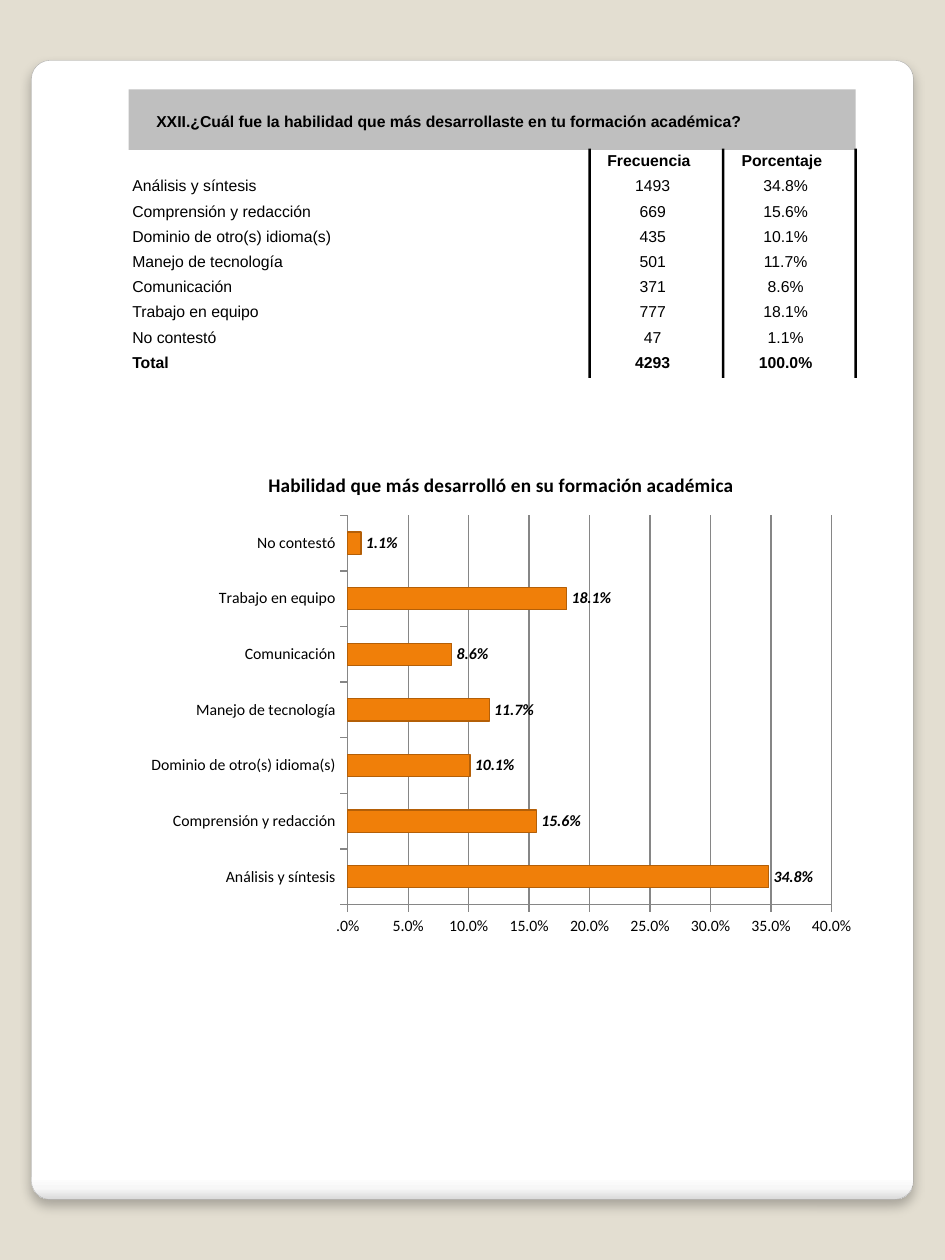
from pptx import Presentation
from pptx.chart.data import CategoryChartData
from pptx.dml.color import RGBColor
from pptx.enum.chart import XL_CHART_TYPE, XL_LABEL_POSITION, XL_TICK_MARK
from pptx.enum.shapes import MSO_SHAPE
from pptx.enum.text import MSO_ANCHOR, PP_ALIGN
from pptx.oxml import parse_xml
from pptx.oxml.ns import nsdecls
from pptx.util import Inches, Pt

BAR = XL_CHART_TYPE.BAR_CLUSTERED
OUTSIDE_END = XL_LABEL_POSITION.OUTSIDE_END
TICK_OUT = XL_TICK_MARK.OUTSIDE
ROUNDED, RECTANGLE = MSO_SHAPE.ROUNDED_RECTANGLE, MSO_SHAPE.RECTANGLE
MIDDLE = MSO_ANCHOR.MIDDLE
LEFT, CENTER = PP_ALIGN.LEFT, PP_ALIGN.CENTER
NO_GRID_STYLE = "{2D5ABB26-0587-4C30-8999-92F81FD0307C}"

QUESTION = "XXII.¿Cuál fue la habilidad que más desarrollaste en tu formación académica?"
CHART_TITLE = "Habilidad que más desarrolló en su formación académica"
SKILLS = [
    ("Análisis y síntesis", 1493, 0.348),
    ("Comprensión y redacción", 669, 0.156),
    ("Dominio de otro(s) idioma(s)", 435, 0.101),
    ("Manejo de tecnología", 501, 0.117),
    ("Comunicación", 371, 0.086),
    ("Trabajo en equipo", 777, 0.181),
    ("No contestó", 47, 0.011),
]
PERCENT = "####.0%"


def rgb(value):
    return RGBColor.from_string(value)


class SurveySlide:
    text_color = "000000"
    grid_color = "868686"
    table_font = "Arial"
    chart_font = "Calibri"

    def __init__(self, slide):
        self.slide = slide

    def style(self, font, name, size=9, bold=False, italic=False):
        font.name, font.size = name, Pt(size)
        font.bold, font.italic = bold, italic
        font.color.rgb = rgb(self.text_color)

    def background(self, color):
        fill = self.slide.background.fill
        fill.solid()
        fill.fore_color.rgb = rgb(color)

    def panel(self, left, top, width, height, stops):
        """Rounded card with a vertical gradient and a soft shadow, behind all else."""
        card = self.slide.shapes.add_shape(
            ROUNDED, Inches(left), Inches(top), Inches(width), Inches(height))
        card.adjustments[0] = 0.021
        card.fill.gradient()
        card.fill.gradient_angle = 270
        stop_list = card._element.spPr.find(".//{*}gsLst")
        for stop in list(stop_list):
            stop_list.remove(stop)
        for position, color in stops:
            stop_list.append(parse_xml(
                f'<a:gs {nsdecls("a")} pos="{position * 1000}">'
                f'<a:srgbClr val="{color}"/></a:gs>'))
        card.line.color.rgb = rgb("A4A4A4")
        card.line.width = Pt(0.16)
        card.shadow.inherit = False
        card._element.spPr.find("{*}effectLst").append(parse_xml(
            f'<a:outerShdw {nsdecls("a")} blurRad="{Pt(6)}" dist="{Pt(4)}" '
            'dir="5400000" algn="t" rotWithShape="0"><a:srgbClr val="000000">'
            '<a:alpha val="25000"/></a:srgbClr></a:outerShdw>'))
        self.slide.shapes._spTree.insert(2, card._element)

    def title(self, text, left, top, width, height):
        title = self.slide.shapes.title
        title.left, title.top = Inches(left), Inches(top)
        title.width, title.height = Inches(width), Inches(height)
        title.fill.solid()
        title.fill.fore_color.rgb = rgb("BFBFBF")
        frame = title.text_frame
        frame.text = text
        frame.word_wrap = True
        frame.vertical_anchor = MIDDLE
        frame.margin_left, frame.margin_right = Inches(0.22), 0
        frame.margin_top, frame.margin_bottom = Inches(0.03), 0
        heading = frame.paragraphs[0]
        heading.alignment = LEFT
        self.style(heading.font, self.table_font, bold=True)

    def table(self, rows, left, top, widths, row_height):
        """Rows without borders; the first and last are bold."""
        frame = self.slide.shapes.add_table(
            len(rows), len(widths), Inches(left), Inches(top),
            Inches(sum(widths)), Inches(row_height * len(rows)))
        table = frame.table
        table.first_row = table.horz_banding = False
        table._tbl.tblPr.find("{*}tableStyleId").text = NO_GRID_STYLE
        for column, width in zip(table.columns, widths):
            column.width = Inches(width)
        for r, row in enumerate(rows):
            table.rows[r].height = Inches(row_height)
            for c, text in enumerate(row):
                self.cell(table.cell(r, c), text, c == 0, r == 0, r in (0, len(rows) - 1))

    def cell(self, cell, text, is_label, is_header, bold):
        cell.text = text
        cell.fill.background()
        cell.vertical_anchor = MIDDLE
        cell.margin_top = cell.margin_bottom = 0
        cell.margin_left = Inches(0.03 if is_label else 0)
        cell.margin_right = Inches(0.12 if is_header else 0.06)
        paragraph = cell.text_frame.paragraphs[0]
        paragraph.alignment = LEFT if is_label else CENTER
        self.style(paragraph.font, self.table_font, bold=bold)

    def column_rule(self, left, top, height):
        rule = self.slide.shapes.add_shape(
            RECTANGLE, Inches(left), Inches(top), Inches(0.02), Inches(height))
        rule.shadow.inherit = False
        rule.fill.solid()
        rule.fill.fore_color.rgb = rgb(self.text_color)
        rule.line.fill.background()

    def bar_chart(self, title, skills, left, top, width, height):
        data = CategoryChartData(number_format=PERCENT)
        data.categories = [name for name, _, _ in skills]
        data.add_series("Series 1", [share for _, _, share in skills])
        chart = self.slide.shapes.add_chart(
            BAR, Inches(left), Inches(top), Inches(width), Inches(height), data).chart
        self.style(chart.font, self.chart_font)
        chart.has_legend = False
        chart.has_title = True
        chart.chart_title.include_in_layout = False
        heading = chart.chart_title.text_frame
        heading.text = title
        self.style(heading.paragraphs[0].font, self.chart_font, size=11, bold=True)

        plot = chart.plots[0]
        plot.gap_width = 150
        plot.vary_by_categories = False
        bars = plot.series[0].format
        bars.fill.solid()
        bars.fill.fore_color.rgb = rgb("F07F09")
        bars.line.color.rgb = rgb("B45F07")
        bars.line.width = Pt(0.75)
        plot.has_data_labels = True
        labels = plot.data_labels
        labels.show_value = True
        labels.position = OUTSIDE_END
        labels.number_format, labels.number_format_is_linked = PERCENT, False
        self.style(labels.font, self.chart_font, bold=True, italic=True)

        shares = chart.value_axis
        shares.minimum_scale, shares.maximum_scale, shares.major_unit = 0, 0.4, 0.05
        shares.has_major_gridlines = True
        shares.major_gridlines.format.line.color.rgb = rgb(self.grid_color)
        shares.tick_labels.number_format = PERCENT
        shares.tick_labels.number_format_is_linked = False
        for axis in (chart.category_axis, shares):
            axis.major_tick_mark = TICK_OUT
            axis.format.line.color.rgb = rgb(self.grid_color)
            self.style(axis.tick_labels.font, self.chart_font)
        self.place_plot(chart, x=1.67 / width, y=0.5 / height,
                        w=3.84 / width, h=3.09 / height)

    def place_plot(self, chart, **fractions):
        """Fix the inner plot area, in fractions of the chart's size."""
        plot_area = chart._chartSpace.chart.plotArea
        for automatic in plot_area.findall("{*}layout"):
            plot_area.remove(automatic)
        sizes = "".join(f'<c:{key} val="{part:.4f}"/>' for key, part in fractions.items())
        plot_area.insert(0, parse_xml(
            f'<c:layout {nsdecls("c")}><c:manualLayout><c:layoutTarget val="inner"/>'
            f'<c:xMode val="edge"/><c:yMode val="edge"/>{sizes}'
            '</c:manualLayout></c:layout>'))


def main():
    presentation = Presentation()
    presentation.slide_width, presentation.slide_height = Inches(7.5), Inches(10)
    survey = SurveySlide(presentation.slides.add_slide(presentation.slide_layouts[5]))
    survey.background("E3DED1")
    survey.panel(0.25, 0.48, 7, 9.04,
                 [(0, "FFFFFF"), (98, "FFFFFF"), (99, "F7F7F7"), (100, "DADADA")])
    survey.title(QUESTION, 1.02, 0.71, 5.77, 0.48)
    total = sum(count for _, count, _ in SKILLS)
    rows = [("", "Frecuencia", "Porcentaje")]
    rows += [(name, str(count), f"{share:.1%}") for name, count, share in SKILLS]
    rows.append(("Total", str(total), "100.0%"))
    survey.table(rows, 1.02, 1.18, [3.66, 1.06, 1.05], 0.2)
    for rule_left in (4.67, 5.73, 6.78):
        survey.column_rule(rule_left, 1.18, 1.82)
    survey.bar_chart(CHART_TITLE, SKILLS, 1.09, 3.59, 5.78, 3.91)
    presentation.save("out.pptx")


if __name__ == "__main__":
    main()
